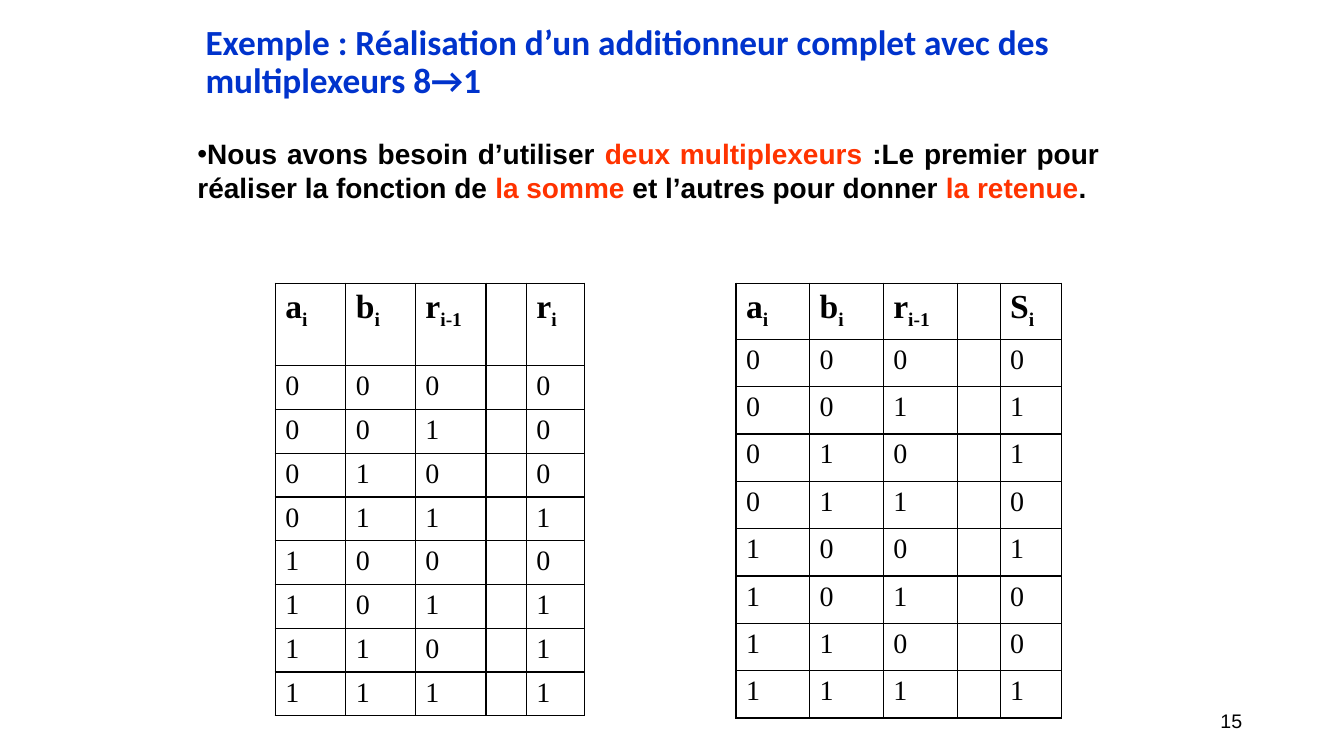
from itertools import product

from lxml.etree import SubElement as Sub
from pptx import Presentation
from pptx.dml.color import RGBColor as Rgb
from pptx.enum.text import MSO_ANCHOR as Anchor, PP_ALIGN as Align
from pptx.oxml.ns import qn
from pptx.util import Emu, Pt

SCALE = 9144  # EMU per px, 100 px to the inch
HUES = {"ink": "000000", "paper": "FFFFFF", "blue": "0033CC", "red": "FF3300"}
HEAD = {"name": "Calibri", "size": Pt(25.2), "bold": True}
BODY = {"name": "Arial", "size": Pt(20), "bold": True}
PAGE = {"name": "Arial", "size": Pt(14)}
LABEL = {"name": "Times New Roman", "size": Pt(24), "bold": True}
DIGIT = {"name": "Times New Roman", "size": Pt(20), "bold": False}


def px(num):
    return Emu(num * SCALE)


def hue(key):
    return Rgb.from_string(HUES[key])


def paint(item):
    item.fill.solid()
    item.fill.fore_color.rgb = hue("paper")


def add_run(para, text, style, tint="ink"):
    run = para.add_run()
    run.text = text
    for key, value in style.items():
        setattr(run.font, key, value)
    run.font.color.rgb = hue(tint)
    return run


def add_text(slide, box, parts, style, align=Align.LEFT, anchor=Anchor.TOP):
    """Add a text box from (text, tint) parts; return it with its paragraph."""
    shape = slide.shapes.add_textbox(*map(px, box))
    frame = shape.text_frame
    frame.word_wrap = True
    frame.vertical_anchor = anchor
    para = frame.paragraphs[0]
    para.alignment = align
    for text, tint in parts:
        add_run(para, text, style, tint)
    return shape, para


def add_dot(para):
    props = para._p.get_or_add_pPr()
    props.set("marL", "0")
    props.set("indent", "0")
    Sub(props, qn("a:buFont"), typeface="Arial")
    Sub(props, qn("a:buChar"), char="•")


def add_edges(cell):
    props = cell._tc.get_or_add_tcPr()
    for side in ("lnL", "lnR", "lnT", "lnB"):
        line = Sub(props, qn("a:" + side), w=str(Pt(1)))
        fill = Sub(line, qn("a:solidFill"))
        Sub(fill, qn("a:srgbClr"), val=HUES["ink"])


def fill_cell(cell, text, style):
    """Fill one cell; what follows "_" in the text is set as a subscript."""
    add_edges(cell)
    paint(cell)
    if not text:
        return
    para = cell.text_frame.paragraphs[0]
    props = para._p.get_or_add_pPr()
    props.set("marL", str(px(38)))
    props.set("indent", str(px(-38)))
    base, _, sub = text.partition("_")
    add_run(para, base, style)
    if sub:
        run = add_run(para, sub, style)
        run._r.get_or_add_rPr().set("baseline", "-25000")


def add_truth(slide, spot, cols, top, step, name, logic):
    """Add the truth table of a three-input function."""
    rows = [("a_i", "b_i", "r_i-1", "", name)]
    for bits in product((0, 1), repeat=3):
        rows.append((*map(str, bits), "", str(logic(bits))))
    high = [top] + [step] * (len(rows) - 1)
    size = (sum(cols), sum(high))
    table = slide.shapes.add_table(
        len(rows), len(cols), *map(px, spot + size)).table
    table.first_row = table.horz_banding = False
    for col, width in zip(table.columns, cols):
        col.width = px(width)
    for i, (row, height) in enumerate(zip(table.rows, high)):
        row.height = px(height)
        for cell, text in zip(row.cells, rows[i]):
            fill_cell(cell, text, DIGIT if i else LABEL)


def carry(bits):
    return int(sum(bits) > 1)


def total(bits):
    return sum(bits) % 2


def main():
    deck = Presentation()
    deck.slide_width, deck.slide_height = px(1333), px(750)
    slide = deck.slides.add_slide(deck.slide_layouts[6])

    add_text(slide, (942, 695, 300, 40), [("15", "ink")], PAGE,
             Align.RIGHT, Anchor.MIDDLE)
    title = ("Exemple : Réalisation d’un additionneur complet "
             "avec des multiplexeurs 8→1")
    shape, para = add_text(slide, (194, 0, 867, 125), [(title, "blue")],
                           HEAD, anchor=Anchor.MIDDLE)
    paint(shape)
    para.line_spacing = 0.9

    add_truth(slide, (273, 281), (70, 69, 70, 40, 58), 82, 43, "r_i", carry)
    add_truth(slide, (730, 281), (73, 73, 74, 42, 61), 53, 47, "S_i", total)

    parts = [
        ("Nous avons besoin d’utiliser ", "ink"),
        ("deux multiplexeurs", "red"),
        (" :Le premier pour réaliser la fonction de ", "ink"),
        ("la somme", "red"),
        (" et l’autres pour donner ", "ink"),
        ("la retenue", "red"),
        (".", "ink"),
    ]
    shape, para = add_text(slide, (186, 131, 914, 77), parts, BODY,
                           Align.JUSTIFY)
    paint(shape)
    add_dot(para)

    deck.save("out.pptx")


if __name__ == "__main__":
    main()
